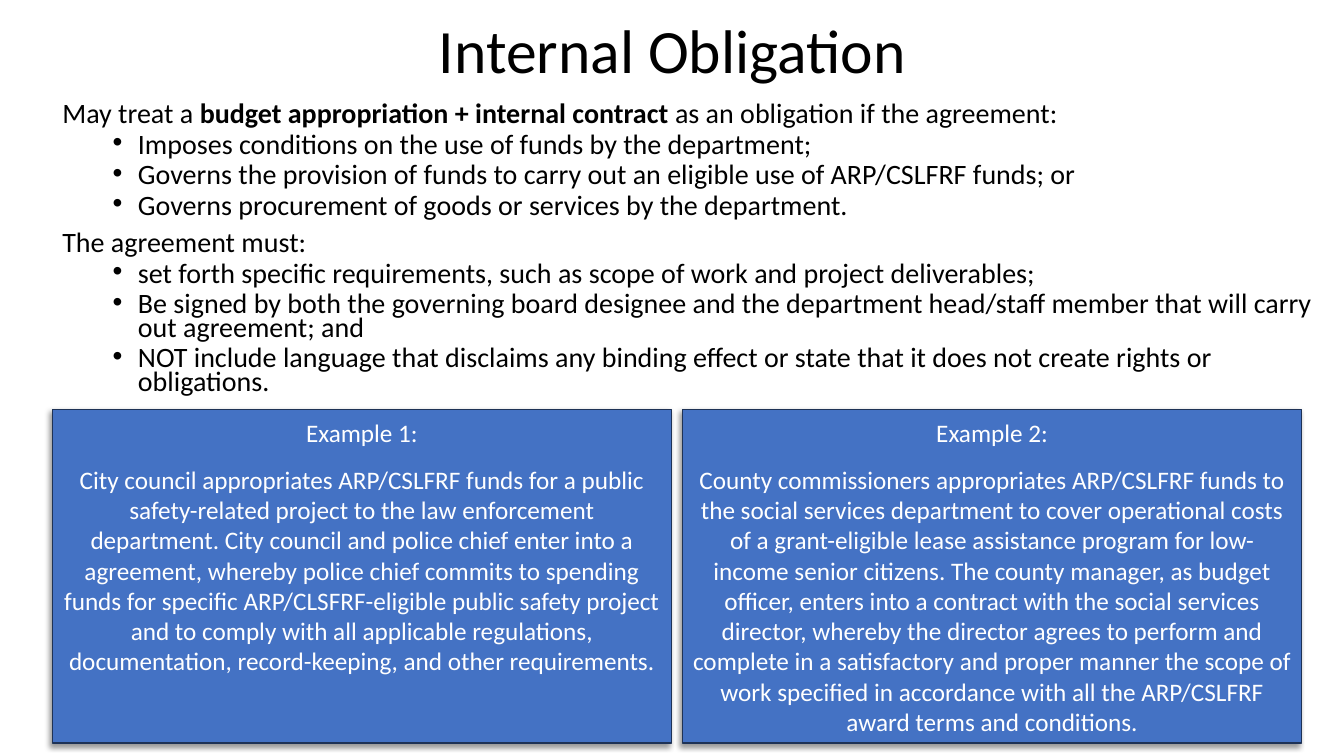
from lxml.etree import SubElement
from pptx import Presentation
from pptx.dml.color import RGBColor
from pptx.enum.shapes import MSO_SHAPE as Shape
from pptx.enum.text import MSO_ANCHOR as Anchor, PP_ALIGN as Align
from pptx.oxml.ns import qn
from pptx.util import Inches, Pt

BLACK = RGBColor(0x00, 0x00, 0x00)
WHITE = RGBColor(0xFF, 0xFF, 0xFF)
BLUE = RGBColor(0x44, 0x72, 0xC4)
NAVY = RGBColor(0x1E, 0x32, 0x56)

TITLE_FORMAT = {"alignment": Align.CENTER, "line_spacing": 0.9}
LEAD_FORMAT = {"line_spacing": 0.7, "space_before": Pt(10)}
BULLET_FORMAT = {"line_spacing": 0.7, "space_before": Pt(5), "level": 1}
HEADING_FORMAT = {"alignment": Align.CENTER}
EXAMPLE_FORMAT = {"alignment": Align.CENTER, "space_before": Pt(12)}

# Each section: lead-in as (text, bold) runs, then its bullets
SECTIONS = [
    ([("May treat a ", False),
      ("budget appropriation + internal contract ", True),
      ("as an obligation if the agreement:", False)],
     ["Imposes conditions on the use of funds by the department;",
      "Governs the provision of funds to carry out an eligible use of ARP/CSLFRF funds; or",
      "Governs procurement of goods or services by the department."]),
    ([("The agreement must:", False)],
     ["set forth specific requirements, such as scope of work and project deliverables;",
      "Be signed by both the governing board designee and the department head/staff member "
      "that will carry out agreement; and",
      "NOT include language that disclaims any binding effect or state that it does not "
      "create rights or obligations."]),
]

EXAMPLES = [
    "City council appropriates ARP/CSLFRF funds for a public safety-related project to the "
    "law enforcement department. City council and police chief enter into a agreement, "
    "whereby police chief commits to spending funds for specific ARP/CLSFRF-eligible public "
    "safety project and to comply with all applicable regulations, documentation, "
    "record-keeping, and other requirements.",
    "County commissioners appropriates ARP/CSLFRF funds to the social services department to "
    "cover operational costs of a grant-eligible lease assistance program for low-income "
    "senior citizens. The county manager, as budget officer, enters into a contract with the "
    "social services director, whereby the director agrees to perform and complete in a "
    "satisfactory and proper manner the scope of work specified in accordance with all the "
    "ARP/CSLFRF award terms and conditions.",
]


class SlideBuilder:
    font_name = "Calibri"

    def __init__(self, slide):
        self.slide = slide

    def text_box(self, left, top, width, height, anchor=Anchor.TOP):
        shape = self.slide.shapes.add_textbox(
            Inches(left), Inches(top), Inches(width), Inches(height))
        frame = shape.text_frame
        frame.word_wrap = True
        frame.vertical_anchor = anchor
        return frame

    def panel(self, left, top, width, height):
        shape = self.slide.shapes.add_shape(
            Shape.RECTANGLE, Inches(left), Inches(top), Inches(width), Inches(height))
        shape.fill.solid()
        shape.fill.fore_color.rgb = BLUE
        shape.line.color.rgb = NAVY
        shape.line.width = Pt(1)
        self.drop_shadow(shape)
        frame = shape.text_frame
        frame.word_wrap = True
        frame.vertical_anchor = Anchor.TOP
        frame.margin_top = Inches(0.08)
        return frame

    def drop_shadow(self, shape):
        shape.shadow.inherit = False
        effects = shape.element.spPr.find(qn("a:effectLst"))
        shadow = SubElement(effects, qn("a:outerShdw"), blurRad=str(Pt(4)), dist=str(Pt(3)),
                            dir=str(135 * 60000), algn="tr", rotWithShape="0")
        color = SubElement(shadow, qn("a:srgbClr"), val=str(BLACK))
        SubElement(color, qn("a:alpha"), val="40000")

    def paragraph(self, frame, runs, size, color, formats):
        first = frame.paragraphs[0]
        paragraph = frame.add_paragraph() if first.runs else first
        for name, value in formats.items():
            setattr(paragraph, name, value)
        for text, bold in runs:
            run = paragraph.add_run()
            run.text = text
            font = {"name": self.font_name, "size": Pt(size), "bold": bold}
            for name, value in font.items():
                setattr(run.font, name, value)
            run.font.color.rgb = color
        return paragraph

    def bullet(self, frame, text, size, color):
        paragraph = self.paragraph(frame, [(text, False)], size, color, BULLET_FORMAT)
        properties = paragraph._p.get_or_add_pPr()
        properties.set("marL", str(Inches(0.75)))
        properties.set("indent", str(Inches(-0.25)))
        SubElement(properties, qn("a:buFont"), typeface="Arial")
        SubElement(properties, qn("a:buChar"), char="•")


def main():
    presentation = Presentation()
    presentation.slide_width = Inches(13.33)
    presentation.slide_height = Inches(7.5)
    builder = SlideBuilder(presentation.slides.add_slide(presentation.slide_layouts[6]))

    # Title
    title = builder.text_box(0.92, -0.19, 11.5, 1.45, Anchor.MIDDLE)
    builder.paragraph(title, [("Internal Obligation", False)], 44, BLACK, TITLE_FORMAT)

    # Conditions and requirements
    body = builder.text_box(0.52, 0.99, 12.76, 2.86)
    for lead, bullets in SECTIONS:
        builder.paragraph(body, lead, 20, BLACK, LEAD_FORMAT)
        for text in bullets:
            builder.bullet(body, text, 20, BLACK)

    # Example panels, side by side
    for index, text in enumerate(EXAMPLES):
        panel = builder.panel(0.52 + index * 6.25, 4.06, 6.14, 3.31)
        heading = f"Example {index + 1}:"
        builder.paragraph(panel, [(heading, False)], 18, WHITE, HEADING_FORMAT)
        builder.paragraph(panel, [(text, False)], 18, WHITE, EXAMPLE_FORMAT)

    presentation.save("out.pptx")


if __name__ == "__main__":
    main()
